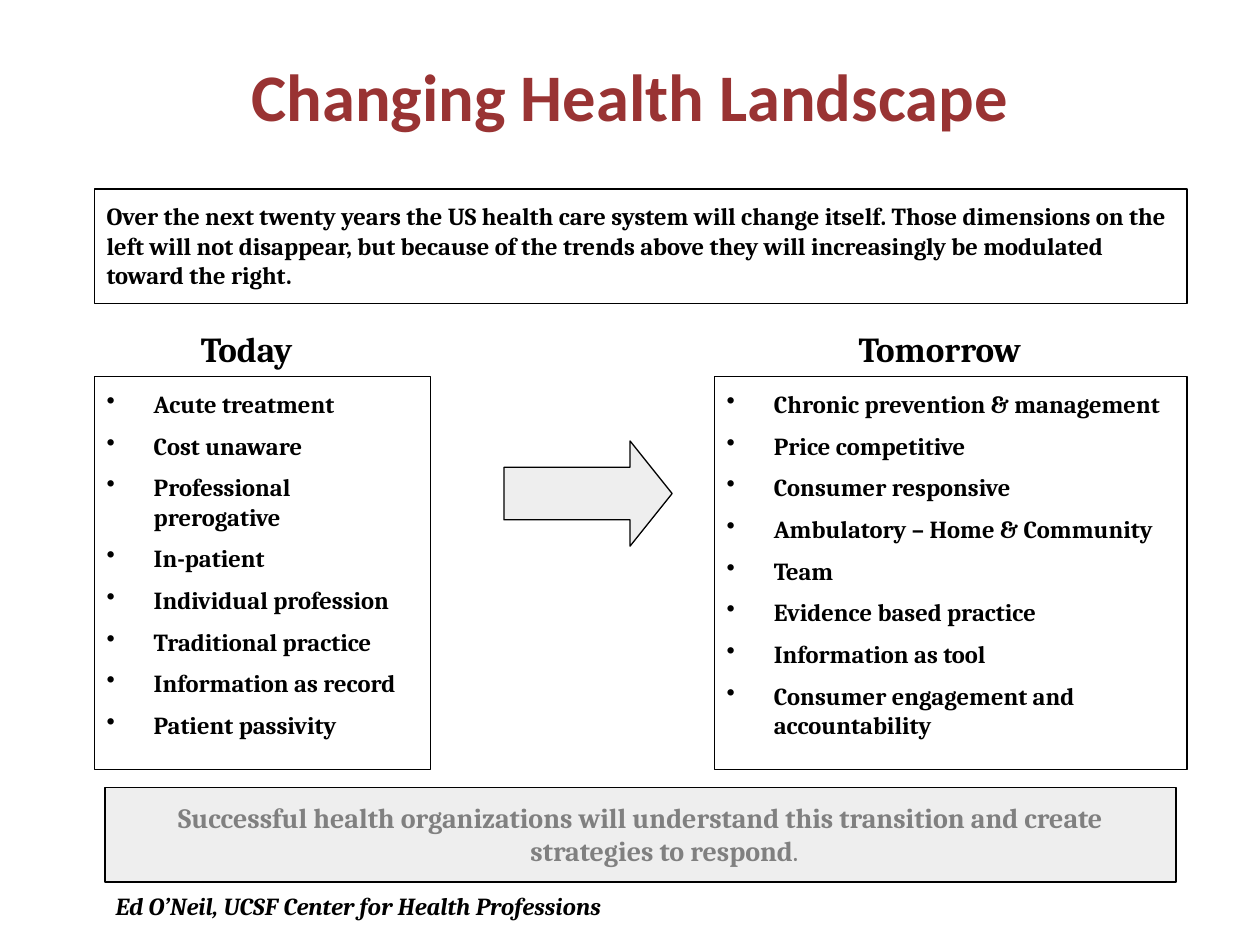
from lxml import etree
from pptx import Presentation
from pptx.dml.color import RGBColor
from pptx.enum import shapes, text
from pptx.oxml import ns
from pptx.util import Cm, Pt

BLACK = RGBColor(0x00, 0x00, 0x00)
MAROON = RGBColor(0x99, 0x33, 0x33)
GREY = RGBColor(0x80, 0x80, 0x80)
PALE = RGBColor(0xEE, 0xEE, 0xEE)

LEFT, FULL_WIDTH = 1.9, 22.03
LIST_TOP, LIST_HEIGHT = 7.59, 7.92
HEADING_TOP, HEADING_WIDTH, HEADING_HEIGHT = 6.35, 5.29, 1.35
INSET = 0.25

TODAY = ["Acute treatment", "Cost unaware", "Professional prerogative", "In-patient",
         "Individual profession", "Traditional practice", "Information as record",
         "Patient passivity"]
TOMORROW = ["Chronic prevention & management", "Price competitive", "Consumer responsive",
            "Ambulatory – Home & Community", "Team", "Evidence based practice",
            "Information as tool", "Consumer engagement and accountability"]


def add_run(paragraph, words, size=14, color=BLACK, font="Cambria", italic=False):
    run = paragraph.add_run()
    run.text = words
    run.font.name, run.font.size = font, Pt(size)
    run.font.bold, run.font.italic = True, italic
    run.font.color.rgb = color


def write(shape, lines, align=text.PP_ALIGN.LEFT, anchor=text.MSO_ANCHOR.TOP,
          bullet=False, hanging=False, inset=INSET, wrap=True, **run_format):
    """Fill a shape with one paragraph per line, spaced half a line apart."""
    frame = shape.text_frame
    frame.word_wrap, frame.vertical_anchor = wrap, anchor
    frame.margin_left = frame.margin_right = Cm(INSET)
    frame.margin_top = frame.margin_bottom = Cm(inset)
    for index, line in enumerate(lines):
        paragraph = frame.add_paragraph() if index else frame.paragraphs[0]
        paragraph.alignment = align
        if index:
            paragraph.space_before = Pt(7)
        properties = paragraph._p.get_or_add_pPr()
        if bullet or hanging:
            properties.set("marL", str(Cm(0.95)))
            properties.set("indent", str(-Cm(0.95)))
        if bullet:
            etree.SubElement(properties, ns.qn("a:buChar")).set("char", "•")
        add_run(paragraph, line, **run_format)
    return frame


class SlideBuilder:
    def __init__(self, slide):
        self.slide = slide
        self.line_color, self.line_width = BLACK, Pt(0.75)

    def shape(self, kind, left, top, width, height, fill=None):
        shape = self.slide.shapes.add_shape(kind, Cm(left), Cm(top), Cm(width), Cm(height))
        shape.shadow.inherit = False
        shape.line.color.rgb, shape.line.width = self.line_color, self.line_width
        if fill is None:
            shape.fill.background()
        else:
            shape.fill.solid()
            shape.fill.fore_color.rgb = fill
        return shape

    def box(self, left, top, width, height, lines, fill=None, **text_format):
        box = self.shape(shapes.MSO_SHAPE.RECTANGLE, left, top, width, height, fill)
        return write(box, lines, **text_format)

    def label(self, left, top, width, height, words, **text_format):
        label = self.slide.shapes.add_textbox(Cm(left), Cm(top), Cm(width), Cm(height))
        return write(label, [words], **text_format)

    def arrow(self, left, top, width, height):
        arrow = self.shape(shapes.MSO_SHAPE.RIGHT_ARROW, left, top, width, height, PALE)
        arrow.adjustments[0], arrow.adjustments[1] = 0.5, 0.4

    def column(self, left, width, heading, heading_left, items):
        self.box(left, LIST_TOP, width, LIST_HEIGHT, items, bullet=True)
        self.label(heading_left, HEADING_TOP, HEADING_WIDTH, HEADING_HEIGHT, heading,
                   align=text.PP_ALIGN.CENTER, hanging=True, size=20)


def main():
    deck = Presentation()
    deck.slide_width, deck.slide_height = Cm(25.4), Cm(19.05)
    builder = SlideBuilder(deck.slides.add_slide(deck.slide_layouts[6]))

    builder.label(0, 0.43, 25.4, 2.97, "Changing Health Landscape", inset=0.13,
                  align=text.PP_ALIGN.CENTER, anchor=text.MSO_ANCHOR.MIDDLE,
                  size=38, color=MAROON, font="Calibri")
    builder.box(LEFT, 3.81, FULL_WIDTH, 2.31, [
        "Over the next twenty years the US health care system will change itself. "
        "Those dimensions on the left will not disappear, but because of the trends "
        "above they will increasingly be modulated toward the right."])

    builder.column(LEFT, 6.78, "Today", 2.33, TODAY)
    builder.column(14.4, 9.53, "Tomorrow", 16.3, TOMORROW)
    builder.arrow(10.16, 8.89, 3.39, 2.12)

    conclusion = builder.box(2.12, 15.88, 21.59, 1.9, [
        "Successful health organizations will understand this transition and create "
        "strategies to respond"],
        fill=PALE, align=text.PP_ALIGN.CENTER, hanging=True, size=16, color=GREY)
    add_run(conclusion.paragraphs[0], ".", size=12, color=GREY)
    builder.label(2.08, 17.83, 10.85, 0.84, "Ed O’Neil, UCSF Center for Health Professions",
                  inset=0.13, wrap=False, italic=True)

    deck.save("out.pptx")


if __name__ == "__main__":
    main()
